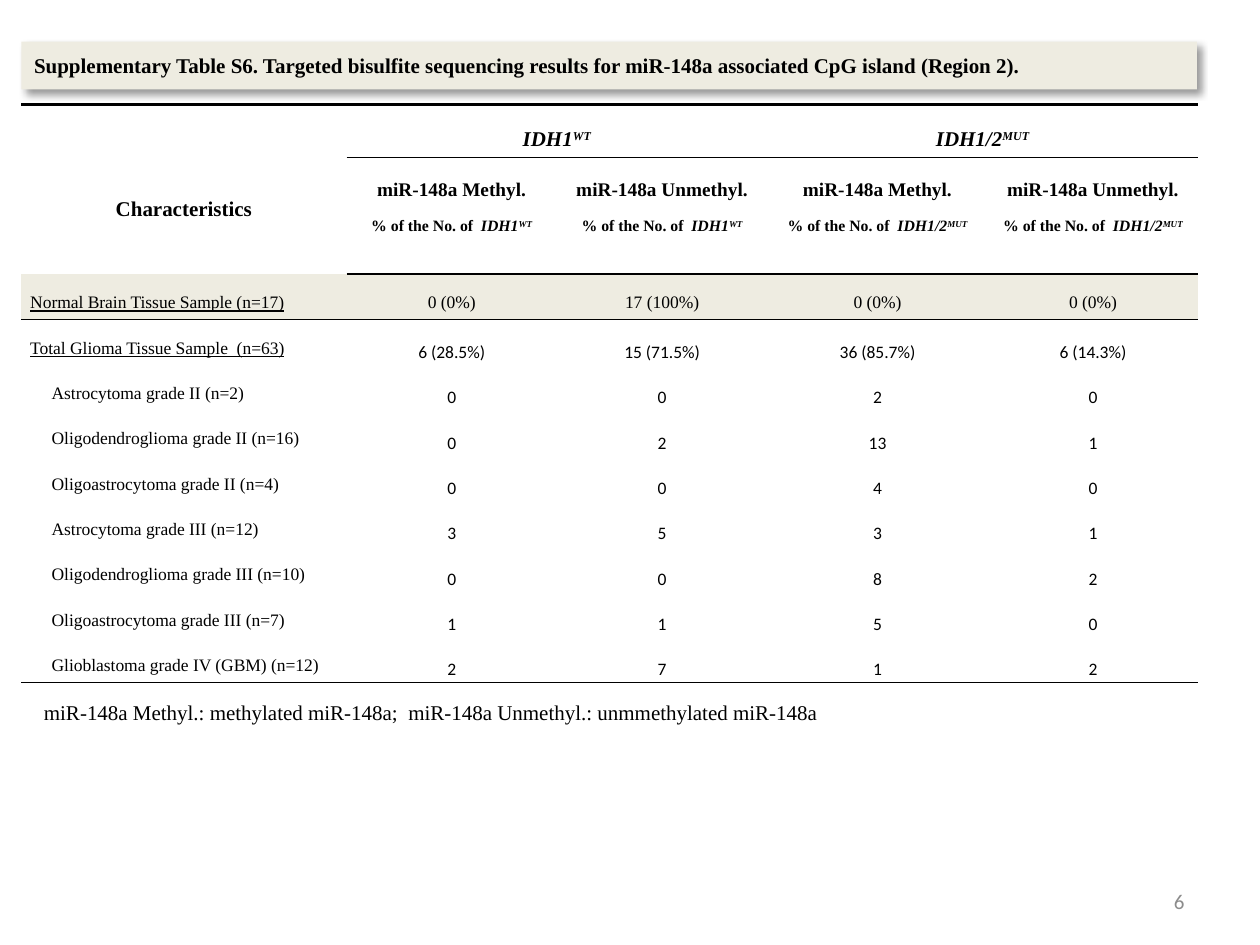
"""Build the slide with the bisulfite sequencing table for miR-148a (Region 2)."""
from dataclasses import dataclass

from lxml import etree
from pptx import Presentation
from pptx import util as u
from pptx.dml import color
from pptx.enum import text
from pptx.oxml import ns

SERIF, SANS = "Times New Roman", "Calibri"
BLACK, WHITE, BEIGE, GREY = "000000", "FFFFFF", "EEECE1", "8C8C8C"
LEFT, CENTER, RIGHT = text.PP_ALIGN.LEFT, text.PP_ALIGN.CENTER, text.PP_ALIGN.RIGHT
NO_GRID_STYLE = "{2D5ABB26-0587-4C30-8999-92F81FD0307C}"


@dataclass
class Span:
    words: str
    size: float
    font: str = SERIF
    bold: bool = False
    italic: bool = False
    underline: bool = False
    raised: bool = False
    color: str = BLACK


@dataclass
class Sample:
    label: str
    counts: tuple[str, ...]
    font: str = SANS
    fill: str = WHITE
    indent: float = 0.17
    underline: bool = False


@dataclass
class Genotype:
    gene: str
    status: str

    def spans(self, size: float) -> list[Span]:
        return [Span(self.gene, size, bold=True, italic=True),
                Span(self.status, size, bold=True, italic=True, raised=True)]


WILD_TYPE, MUTANT = Genotype("IDH1", "WT"), Genotype("IDH1/2", "MUT")
SAMPLES = [
    Sample("Normal Brain Tissue Sample (n=17)", ("0 (0%)", "17 (100%)", "0 (0%)", "0 (0%)"),
           SERIF, BEIGE, 0, True),
    Sample("Total Glioma Tissue Sample  (n=63)",
           ("6 (28.5%)", "15 (71.5%)", "36 (85.7%)", "6 (14.3%)"), indent=0, underline=True),
    Sample("Astrocytoma grade II (n=2)", ("0", "0", "2", "0")),
    Sample("Oligodendroglioma grade II (n=16)", ("0", "2", "13", "1")),
    Sample("Oligoastrocytoma grade II (n=4)", ("0", "0", "4", "0")),
    Sample("Astrocytoma grade III (n=12)", ("3", "5", "3", "1")),
    Sample("Oligodendroglioma grade III (n=10)", ("0", "0", "8", "2")),
    Sample("Oligoastrocytoma grade III (n=7)", ("1", "1", "5", "0")),
    Sample("Glioblastoma grade IV (GBM) (n=12)", ("2", "7", "1", "2")),
]
COLUMN_WIDTHS = [2.58, 1.67, 1.67, 1.75, 1.67]
ROW_HEIGHTS = [0.42, 0.67] + [0.36] * len(SAMPLES)


def rgb(value: str) -> color.RGBColor:
    return color.RGBColor.from_string(value)


def write(paragraph, spans: list[Span], align=LEFT, spacing: float = 1) -> None:
    paragraph.alignment = align
    paragraph.line_spacing = spacing
    for span in spans:
        run = paragraph.add_run()
        run.text = span.words
        font = run.font
        font.size, font.name = u.Pt(span.size), span.font
        font.bold, font.italic, font.underline = span.bold, span.italic, span.underline
        font.color.rgb = rgb(span.color)
        if span.raised:
            font._element.set("baseline", "30000")


def add_note(slide, box: tuple[float, ...], span: Span, align=LEFT,
             anchor=text.MSO_ANCHOR.TOP) -> None:
    frame = slide.shapes.add_textbox(*map(u.Inches, box)).text_frame
    frame.word_wrap, frame.vertical_anchor = True, anchor
    write(frame.paragraphs[0], [span], align)


def fill_title(title, words: str) -> None:
    title.left, title.top, title.width, title.height = map(u.Inches, (0.17, 0.33, 9.33, 0.38))
    title.fill.solid()
    title.fill.fore_color.rgb = rgb(BEIGE)
    title.text_frame.vertical_anchor = text.MSO_ANCHOR.MIDDLE
    write(title.text_frame.paragraphs[0], [Span(words, 12, bold=True)])
    title._element.spPr.append(etree.fromstring(
        f'<a:effectLst {ns.nsdecls("a")}><a:outerShdw blurRad="{u.Pt(4)}" dist="{u.Pt(3)}" '
        f'dir="2700000" algn="tl" rotWithShape="0"><a:srgbClr val="{BLACK}">'
        '<a:alpha val="40000"/></a:srgbClr></a:outerShdw></a:effectLst>'))


def rule_row(table, row: int, side: str, width: float, first_column: int = 0) -> None:
    for column in range(first_column, len(COLUMN_WIDTHS)):
        table.cell(row, column)._tc.get_or_add_tcPr().append(etree.fromstring(
            f'<a:ln{side} {ns.nsdecls("a")} w="{u.Pt(width)}"><a:solidFill>'
            f'<a:srgbClr val="{BLACK}"/></a:solidFill></a:ln{side}>'))


def set_margins(cell, side: float, top: float) -> None:
    cell.margin_left = cell.margin_right = u.Inches(side)
    cell.margin_top, cell.margin_bottom = u.Inches(top), 0


def fill_header(table) -> None:
    for row in range(2):
        for column in range(len(COLUMN_WIDTHS)):
            set_margins(table.cell(row, column), 0.07, 0)
    characteristics = table.cell(0, 0)
    characteristics.merge(table.cell(1, 0))
    write(characteristics.text_frame.paragraphs[0],
          [Span("Characteristics", 12, bold=True)], CENTER, 5)
    for first, genotype in ((1, WILD_TYPE), (3, MUTANT)):
        group = table.cell(0, first)
        group.merge(table.cell(0, first + 1))
        write(group.text_frame.paragraphs[0], genotype.spans(12), CENTER, 2)
        for offset, state in enumerate(("Methyl.", "Unmethyl.")):
            frame = table.cell(1, first + offset).text_frame
            write(frame.paragraphs[0], [Span(f"miR-148a {state}", 11, bold=True)], CENTER, 2)
            share = [Span("% of the No. of  ", 9, bold=True)] + genotype.spans(9)
            write(frame.add_paragraph(), share, CENTER, 2)


def fill_sample(table, row: int, sample: Sample) -> None:
    label = table.cell(row, 0)
    set_margins(label, 0.07, 0)
    paragraph = label.text_frame.paragraphs[0]
    paragraph._p.get_or_add_pPr().set("marL", str(u.Inches(sample.indent)))
    write(paragraph, [Span(sample.label, 10, underline=sample.underline)], spacing=2)
    for column, count in enumerate(sample.counts, 1):
        cell = table.cell(row, column)
        set_margins(cell, *((0.07, 0) if sample.font == SERIF else (0.06, 0.01)))
        write(cell.text_frame.paragraphs[0], [Span(count, 10, sample.font)], CENTER, 2)
    for column in range(len(COLUMN_WIDTHS)):
        cell = table.cell(row, column)
        cell.fill.solid()
        cell.fill.fore_color.rgb = rgb(sample.fill)


def add_results(slide) -> None:
    frame = slide.shapes.add_table(len(ROW_HEIGHTS), len(COLUMN_WIDTHS), u.Inches(0.17),
                                   u.Inches(0.83), u.Inches(9.33), u.Inches(4.32))
    table = frame.table
    table.first_row = table.horz_banding = False
    table._tbl.tblPr.find(ns.qn("a:tableStyleId")).text = NO_GRID_STYLE
    for column, width in zip(table.columns, COLUMN_WIDTHS):
        column.width = u.Inches(width)
    for row, height in zip(table.rows, ROW_HEIGHTS):
        row.height = u.Inches(height)
    rule_row(table, 0, "T", 1.5)
    rule_row(table, 0, "B", 0.75, first_column=1)
    rule_row(table, 1, "B", 1.5)
    rule_row(table, 2, "B", 0.75)
    rule_row(table, len(ROW_HEIGHTS) - 1, "B", 0.75)
    fill_header(table)
    for row, sample in enumerate(SAMPLES, 2):
        fill_sample(table, row, sample)


def main() -> None:
    deck = Presentation()
    deck.slide_width, deck.slide_height = u.Inches(10), u.Inches(7.5)
    slide = deck.slides.add_slide(deck.slide_layouts[5])
    fill_title(slide.shapes.title, "Supplementary Table S6. Targeted bisulfite sequencing "
               "results for miR-148a associated CpG island (Region 2).")
    add_results(slide)
    add_note(slide, (7.17, 6.95, 2.33, 0.4), Span("6", 12, SANS, color=GREY), RIGHT,
             text.MSO_ANCHOR.MIDDLE)
    add_note(slide, (0.25, 5.5, 9.25, 0.3),
             Span("miR-148a Methyl.: methylated miR-148a;  "
                  "miR-148a Unmethyl.: unmmethylated miR-148a", 12))
    deck.save("out.pptx")


if __name__ == "__main__":
    main()
